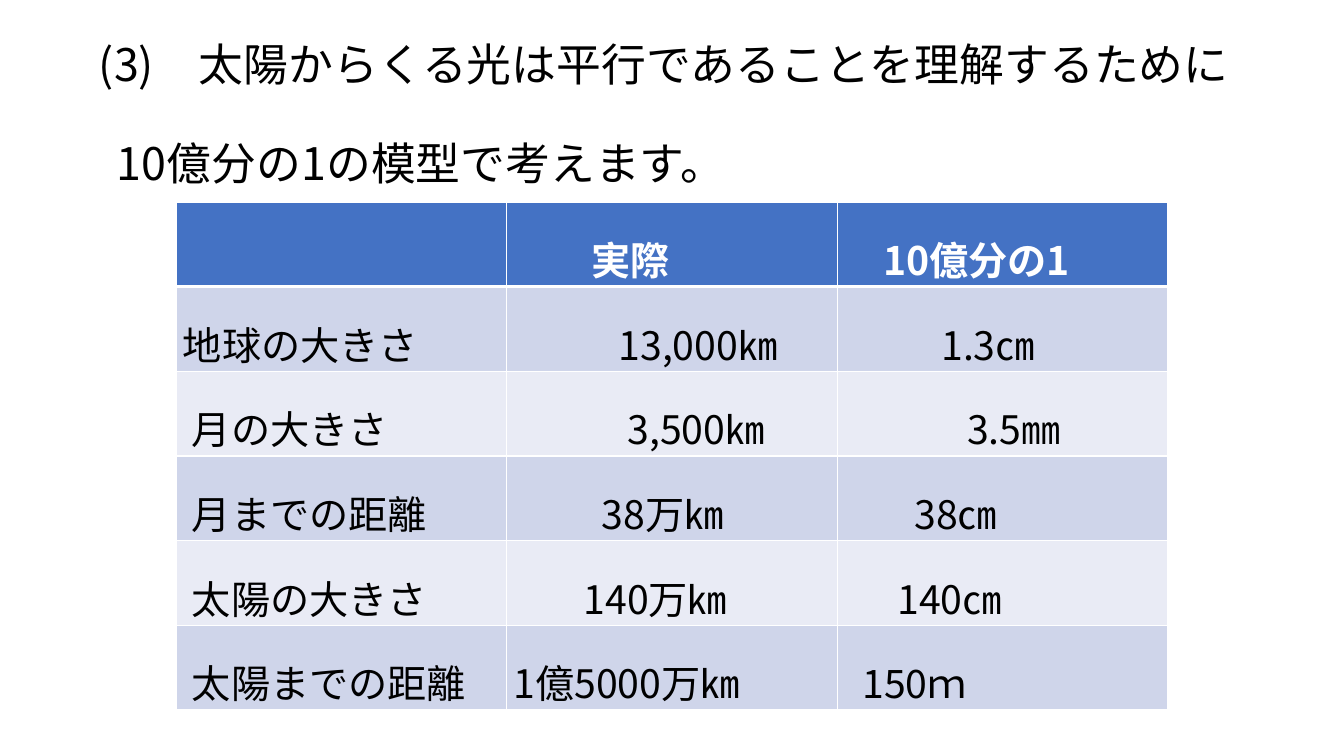
from lxml import etree
from pptx import Presentation
from pptx.dml.color import RGBColor
from pptx.enum.text import MSO_AUTO_SIZE, PP_ALIGN
from pptx.oxml.ns import qn
from pptx.util import Emu, Pt

JUSTIFY = PP_ALIGN.JUSTIFY
GROW = MSO_AUTO_SIZE.SHAPE_TO_FIT_TEXT
FONT = "Noto Sans CJK JP"
BLACK, WHITE = "000000", "FFFFFF"
HEADER_FILL = "4472C4"
BAND_FILLS = ("E9EBF5", "CFD5EA")
INSET = 7
ROWS = [
    [("", 0), ("実際", 78), ("10億分の1", 39)],
    [("地球の大きさ", 0), ("13,000㎞", 105), ("1.3㎝", 97)],
    [("月の大きさ", 9), ("3,500㎞", 114), ("3.5㎜", 123)],
    [("月までの距離", 9), ("38万㎞", 88), ("38㎝", 70)],
    [("太陽の大きさ", 9), ("140万㎞", 70), ("140㎝", 53)],
    [("太陽までの距離", 9), ("1億5000万㎞", 0), ("150ｍ", 18)],
]


def px(length):
    return Emu(round(length * 914400 / 100.8))


def color(value):
    return RGBColor.from_string(value)


def write(frame, text, size=28, fill=BLACK, bold=False, indent=0, align=None, spacing=None):
    para = frame.paragraphs[0]
    para.alignment = align
    para.line_spacing = spacing
    para.font.size = Pt(size)
    if indent:
        para._p.get_or_add_pPr().set("marL", str(px(indent)))
    if text:
        span = para.add_run()
        span.text = text
        span.font.name = FONT
        span.font.size = Pt(size)
        span.font.bold = bold
        span.font.color.rgb = color(fill)
        east_asian = etree.SubElement(span._r.get_or_add_rPr(), qn("a:ea"))
        east_asian.set("typeface", FONT)


def add_sentence(page, text, left, top, width, height, indent=0):
    box = page.shapes.add_textbox(px(left), px(top), px(width), px(height))
    frame = box.text_frame
    frame.word_wrap = True
    frame.auto_size = GROW
    frame.margin_left = frame.margin_right = px(INSET)
    frame.margin_top = frame.margin_bottom = 0
    write(frame, text, size=32, indent=indent, align=JUSTIFY)


def set_borders(cell, bottom):
    properties = cell._tc.get_or_add_tcPr()
    widths = {"a:lnL": 1, "a:lnR": 1, "a:lnT": 1, "a:lnB": bottom}
    for position, (tag, width) in enumerate(widths.items()):
        line = etree.Element(qn(tag), w=str(Pt(width)))
        fill = etree.SubElement(line, qn("a:solidFill"))
        etree.SubElement(fill, qn("a:srgbClr"), val=WHITE)
        properties.insert(position, line)


def add_scale_table(page, left, top, width, height):
    frame = page.shapes.add_table(len(ROWS), len(ROWS[0]), px(left), px(top), px(width), px(height))
    table = frame.table
    for row_index, row in enumerate(ROWS):
        header = row_index == 0
        for column_index, (text, indent) in enumerate(row):
            cell = table.cell(row_index, column_index)
            cell.margin_left = cell.margin_right = px(INSET)
            cell.margin_top = cell.margin_bottom = 0
            cell.fill.solid()
            cell.fill.fore_color.rgb = color(HEADER_FILL if header else BAND_FILLS[row_index % 2])
            below_header = row_index == 1
            set_borders(cell, bottom=3 if header else 1)
            if below_header:
                cell._tc.tcPr.find(qn("a:lnT")).set("w", str(Pt(3)))
            write(cell.text_frame, text, fill=WHITE if header else BLACK, bold=header,
                  indent=indent, spacing=1.5)


def main():
    deck = Presentation()
    deck.slide_width, deck.slide_height = px(1344), px(756)
    page = deck.slides.add_slide(deck.slide_layouts[6])
    add_sentence(page, "(3)\u3000太陽からくる光は平行であることを理解するために".replace("\u3000", "　"),
                 82, 37, 1181, 65, indent=10)
    add_scale_table(page, 176, 202, 992, 508)
    add_sentence(page, "10億分の1の模型で考えます。", 110, 136, 634, 65)
    deck.save("out.pptx")


if __name__ == "__main__":
    main()
